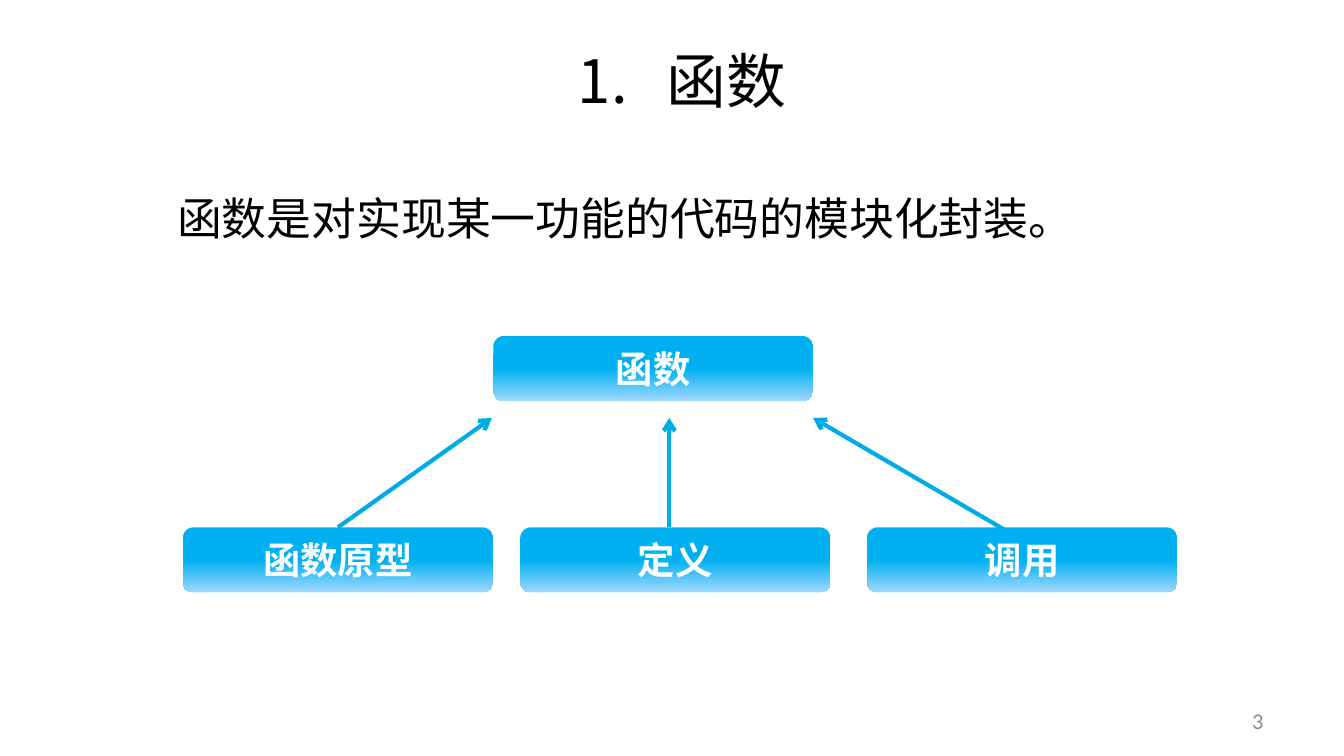
from copy import deepcopy

from lxml import etree
from pptx import Presentation, util as u
from pptx.dml.color import RGBColor
from pptx.enum import shapes, text
from pptx.oxml.ns import qn

SLIDE_WIDTH = u.Inches(10)
SLIDE_HEIGHT = SLIDE_WIDTH * 9 // 16
SKY, PALE_SKY = RGBColor(0x00, 0xB0, 0xF0), RGBColor(0x9F, 0xD8, 0xFF)
ARROW_BLUE = RGBColor(0x00, 0xAC, 0xE6)
WHITE, BLACK = RGBColor(0xFF, 0xFF, 0xFF), RGBColor(0, 0, 0)
GRAY = RGBColor(0x8C, 0x8C, 0x8C)
CJK_FONT = "Noto Sans CJK SC"

# Percent shares of the slide's width and height
ROOT_TOP, PARTS_TOP, ARROW_TOP = 44.44, 69.75, 55.3
BOX_HEIGHT, PART_WIDTH, TEXT_HEIGHT = 8.6, 23.1, 11.38
PARTS = {"函数原型": 13.6, "定义": 38.7, "调用": 64.5}


def across(share):
    return round(SLIDE_WIDTH * share / 100)


def down(share):
    return round(SLIDE_HEIGHT * share / 100)


def area(left, top, width, height):
    return across(left), down(top), across(width), down(height)


def write(shape, words, *, size, color, font=CJK_FONT, bold=False,
          align=text.PP_ALIGN.LEFT, anchor=text.MSO_ANCHOR.TOP,
          spacing=None, numbered=False, grow=True):
    frame = shape.text_frame
    frame.word_wrap = True
    frame.vertical_anchor = anchor
    if grow:
        frame.auto_size = text.MSO_AUTO_SIZE.SHAPE_TO_FIT_TEXT
    paragraph = frame.paragraphs[0]
    paragraph.alignment = align
    if spacing:
        paragraph.line_spacing = spacing
    if numbered:
        number_paragraph(paragraph, u.Inches(0.56))
    run = paragraph.add_run()
    run.text = words
    run.font.name, run.font.size, run.font.bold = font, u.Pt(size), bold
    run.font.color.rgb = color
    east_asian = etree.SubElement(run.font._element, qn("a:ea"))
    east_asian.set("typeface", CJK_FONT)


def number_paragraph(paragraph, indent):
    properties = paragraph._p.get_or_add_pPr()
    properties.set("marL", str(indent))
    properties.set("indent", str(-indent))
    etree.SubElement(properties, qn("a:buFont")).set("typeface", CJK_FONT)
    etree.SubElement(properties, qn("a:buAutoNum")).set("type", "arabicPeriod")


def add_text(slide, place, words, **text_format):
    write(slide.shapes.add_textbox(*place), words, **text_format)


def fill_gradient(shape):
    """Fill downwards: solid sky to the middle, then fading to pale."""
    shape.fill.gradient()
    shape.fill.gradient_angle = 270
    first, last = shape.fill.gradient_stops
    first.color.rgb, first.position = SKY, 0
    last.color.rgb, last.position = PALE_SKY, 1
    stops = shape._element.spPr.find(".//" + qn("a:gsLst"))
    middle = deepcopy(stops[0])
    middle.set("pos", "50000")
    stops.insert(1, middle)


def add_box(slide, place, words):
    box = slide.shapes.add_shape(shapes.MSO_SHAPE.ROUNDED_RECTANGLE, *place)
    box.shadow.inherit = False
    box.line.fill.background()
    fill_gradient(box)
    write(box, words, size=20, color=WHITE, bold=True,
          align=text.PP_ALIGN.CENTER)
    return box


def add_arrow(slide, start, end):
    arrow = slide.shapes.add_connector(
        shapes.MSO_CONNECTOR.STRAIGHT,
        across(start[0]), down(start[1]), across(end[0]), down(end[1]))
    arrow.line.color.rgb = ARROW_BLUE
    arrow.line.width = u.Pt(2.25)
    etree.SubElement(arrow.line._get_or_add_ln(),
                     qn("a:tailEnd")).set("type", "arrow")
    etree.SubElement(arrow._element.spPr, qn("a:effectLst"))
    return arrow


def add_diagram(slide):
    prototype_arrow = add_arrow(slide, (25.15, PARTS_TOP), (36.6, ARROW_TOP))
    add_arrow(slide, (49.8, PARTS_TOP), (49.8, ARROW_TOP))
    add_arrow(slide, (76.6, 72), (60.5, ARROW_TOP))
    add_box(slide, area(36.7, ROOT_TOP, 23.8, BOX_HEIGHT), "函数")
    boxes = [add_box(slide, area(left, PARTS_TOP, PART_WIDTH, BOX_HEIGHT), name)
             for name, left in PARTS.items()]
    prototype_arrow.begin_connect(boxes[0], 0)


def main():
    presentation = Presentation()
    presentation.slide_width = SLIDE_WIDTH
    presentation.slide_height = SLIDE_HEIGHT
    slide = presentation.slides.add_slide(presentation.slide_layouts[6])

    add_diagram(slide)
    add_text(slide, area(71.7, 92.68, 23.3, 5.33), "3", size=12, color=GRAY,
             font="Calibri", align=text.PP_ALIGN.RIGHT,
             anchor=text.MSO_ANCHOR.MIDDLE, grow=False)
    add_text(slide, area(12.2, 20.8, 70.9, TEXT_HEIGHT),
             "函数是对实现某一功能的代码的模块化封装。",
             size=24, color=BLACK, font="Arial", spacing=1.5)
    add_text(slide, area(11.1, 4.98, 79.3, TEXT_HEIGHT), " 函数", size=32,
             color=BLACK, align=text.PP_ALIGN.CENTER, numbered=True)
    presentation.save("out.pptx")


if __name__ == "__main__":
    main()
